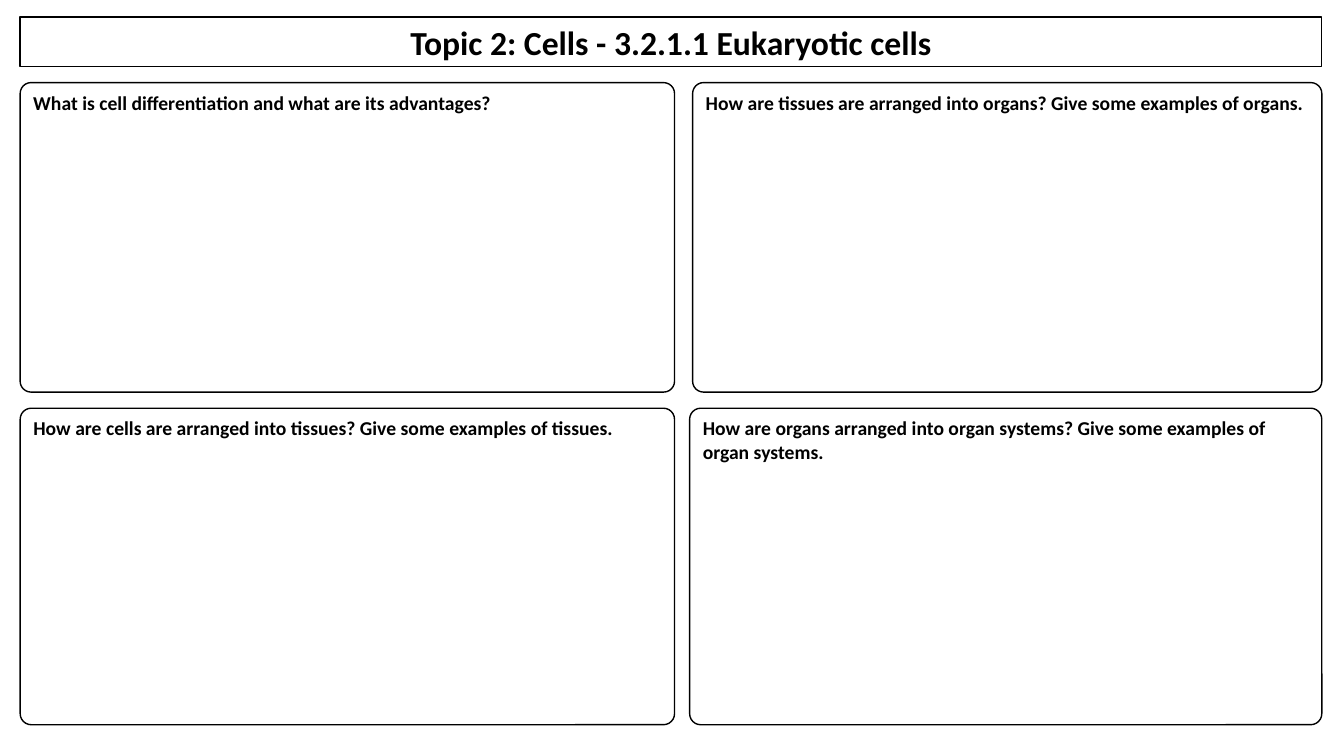
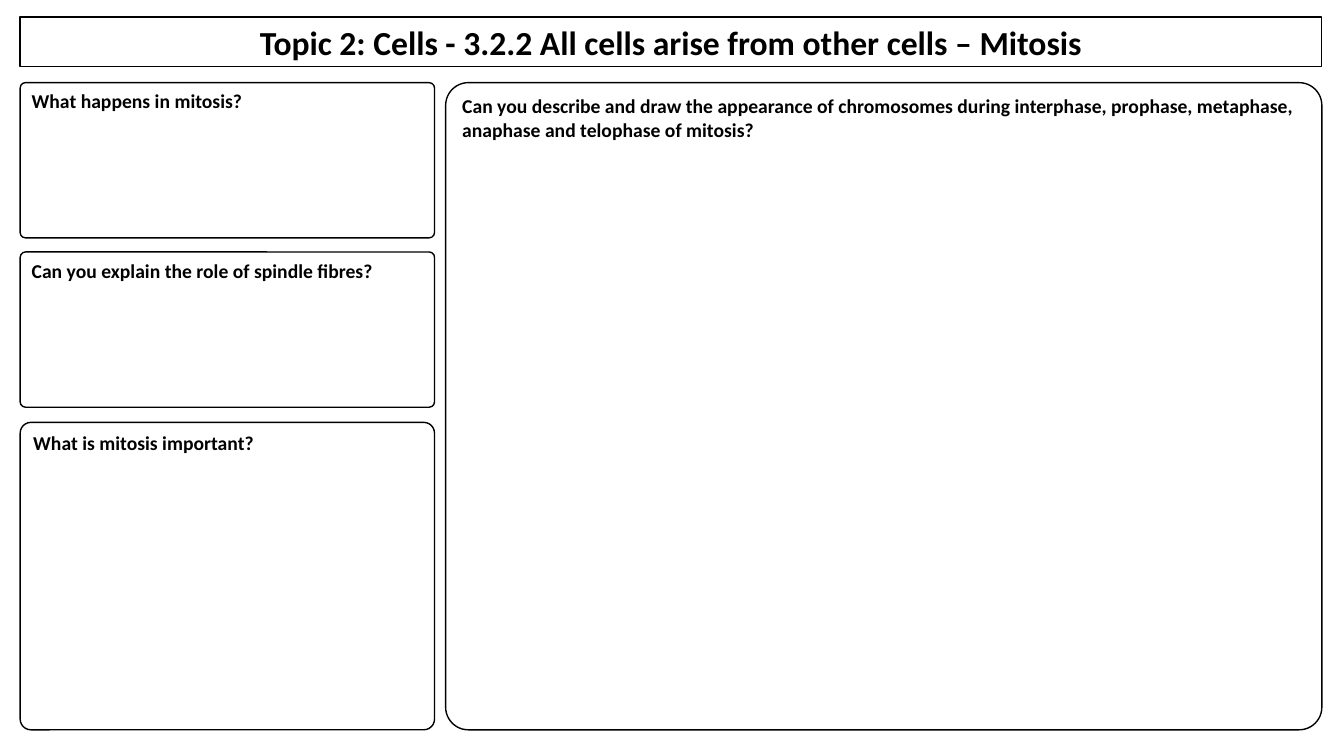
"""Builds two revision worksheets of titled question panels on cells and mitosis."""
from dataclasses import dataclass

from lxml import etree
from pptx import Presentation
from pptx.dml.color import RGBColor
from pptx.enum.shapes import MSO_SHAPE
from pptx.enum.text import MSO_ANCHOR, MSO_AUTO_SIZE, PP_ALIGN
from pptx.oxml.ns import qn
from pptx.util import Inches, Pt

ROUNDED = MSO_SHAPE.ROUNDED_RECTANGLE
TOP, MIDDLE = MSO_ANCHOR.TOP, MSO_ANCHOR.MIDDLE
LEFT, CENTER = PP_ALIGN.LEFT, PP_ALIGN.CENTER
NO_AUTOFIT = MSO_AUTO_SIZE.NONE
TITLE_ONLY = 5


@dataclass(frozen=True)
class Theme:
    """Colours, type and shared measures, in points and inches."""
    ink: RGBColor = RGBColor(0, 0, 0)
    font: str = "Calibri"
    title_size: int = 24
    question_size: int = 14
    outline: int = 1
    rounding: float = 0.035
    left: float = 0.2
    right: float = 13.11
    title_top: float = 0.17
    title_height: float = 0.49
    body_top: float = 0.82


THEME = Theme()


def style_box(box, text, size, align, anchor):
    """Give a box its outline and bold text."""
    box.fill.background()
    box.line.color.rgb = THEME.ink
    box.line.width = Pt(THEME.outline)
    frame = box.text_frame
    frame.text = text
    frame.word_wrap = True
    frame.auto_size = NO_AUTOFIT
    frame.vertical_anchor = anchor
    paragraph = frame.paragraphs[0]
    paragraph.alignment = align
    font = paragraph.font
    font.name, font.size, font.bold = THEME.font, Pt(size), True
    font.color.rgb = THEME.ink


def round_corners(placeholder):
    """Give a placeholder the rounded outline of the panels."""
    geometry = etree.SubElement(placeholder.element.spPr, qn("a:prstGeom"), prst="roundRect")
    adjustments = etree.SubElement(geometry, qn("a:avLst"))
    etree.SubElement(adjustments, qn("a:gd"), name="adj",
                     fmla=f"val {round(THEME.rounding * 100000)}")


def add_title(slide, text):
    """Place the title in its outlined band."""
    title = slide.shapes.title
    title.left, title.top = Inches(THEME.left), Inches(THEME.title_top)
    title.width = Inches(THEME.right - THEME.left)
    title.height = Inches(THEME.title_height)
    round_corners(title)
    style_box(title, text, THEME.title_size, CENTER, MIDDLE)


def add_panel(slide, question, left, top, right, bottom):
    """Add a rounded answer panel headed by its question."""
    panel = slide.shapes.add_shape(ROUNDED, Inches(left), Inches(top),
                                   Inches(right - left), Inches(bottom - top))
    panel.adjustments[0] = THEME.rounding
    panel.shadow.inherit = False
    style_box(panel, question, THEME.question_size, LEFT, TOP)


def add_worksheet(deck, title, panels):
    """Add a slide with a title and its question panels."""
    slide = deck.slides.add_slide(deck.slide_layouts[TITLE_ONLY])
    add_title(slide, title)
    for panel in panels:
        add_panel(slide, *panel)


def main():
    """Build and save the deck."""
    deck = Presentation()
    deck.slide_width, deck.slide_height = Inches(13.33), Inches(7.5)
    left, right, top = THEME.left, THEME.right, THEME.body_top

    upper_end, lower_top, lower_end, left_end = 3.89, 4.05, 7.19, 6.69
    add_worksheet(deck, "Topic 2: Cells - 3.2.1.1 Eukaryotic cells", [
        ("What is cell differentiation and what are its advantages?",
         left, top, left_end, upper_end),
        ("How are cells are arranged into tissues? Give some examples of tissues.",
         left, lower_top, left_end, lower_end),
        ("How are tissues are arranged into organs? Give some examples of organs.",
         6.87, top, right, upper_end),
        ("How are organs arranged into organ systems? Give some examples of organ systems.",
         6.84, lower_top, right, lower_end),
    ])

    side_end, body_end = 4.31, 7.24
    add_worksheet(deck, "Topic 2: Cells - 3.2.2 All cells arise from other cells – Mitosis", [
        ("What happens in mitosis?", left, top, side_end, 2.36),
        ("Can you explain the role of spindle fibres?", left, 2.5, side_end, 4.04),
        ("What is mitosis important?", left, 4.19, side_end, body_end),
        ("Can you describe and draw the appearance of chromosomes during interphase, "
         "prophase, metaphase, anaphase and telophase of mitosis?",
         4.42, top, right, body_end),
    ])
    deck.save("out.pptx")


if __name__ == "__main__":
    main()
